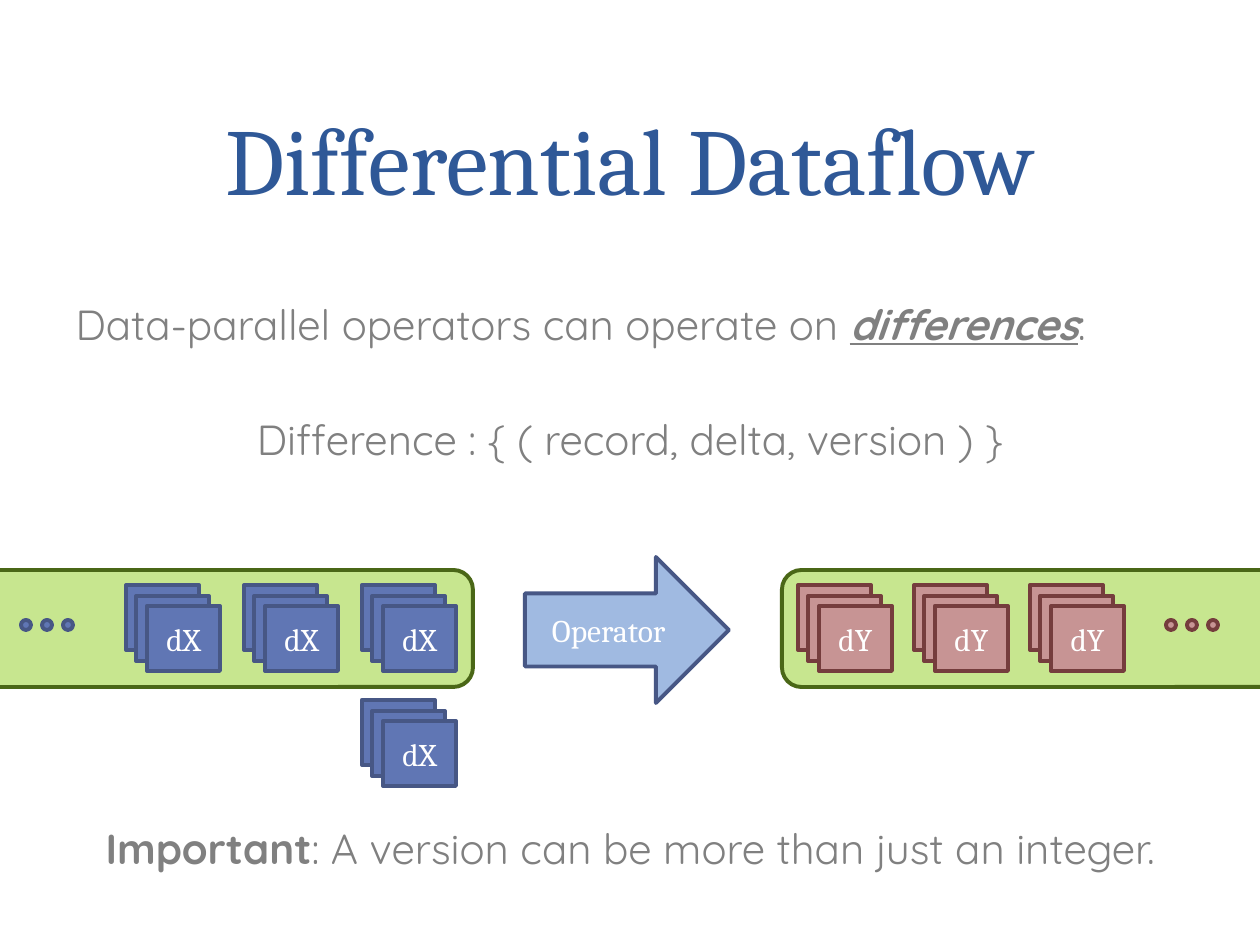
import pptx
import pptx.dml.color
import pptx.enum.shapes
import pptx.enum.text
import pptx.util
from lxml import etree

SHAPE = pptx.enum.shapes.MSO_SHAPE
ALIGN = pptx.enum.text.PP_ALIGN
ANCHOR = pptx.enum.text.MSO_ANCHOR
EMU_PER_PX = 914400 / 126
BLUE = ("6076B4", "475785")
RED = ("C79494", "753D3D")
GREEN = ("C7E68F", "4A6717")
SKY = ("A0BAE1", "475785")


def px(length):
    """Turn a length in px into EMU."""
    return pptx.util.Emu(round(length * EMU_PER_PX))


def color(code):
    """Turn a hex string into a colour."""
    return pptx.dml.color.RGBColor.from_string(code)


class Sketch:
    """Hold the style and the current slide."""

    serif, sans = "Cambria", "Quicksand"
    outline = pptx.util.Pt(2.25)

    def __init__(self, slide):
        """Start drawing on a slide."""
        self.slide = slide

    def place(self, holder, left, top, width, height):
        """Move a placeholder and fix its text size."""
        holder.left, holder.top = px(left), px(top)
        holder.width, holder.height = px(width), px(height)
        holder.text_frame.word_wrap = True
        holder.text_frame.auto_size = pptx.enum.text.MSO_AUTO_SIZE.NONE
        return holder.text_frame

    def run(self, paragraph, text, size, face, code, bold=False, italic=False, underline=False):
        """Add one formatted run."""
        run = paragraph.add_run()
        run.text = text
        font = run.font
        font.name, font.size, font.color.rgb = face, pptx.util.Pt(size), color(code)
        font.bold, font.italic, font.underline = bold, italic, underline

    def title(self, text):
        """Fill the title placeholder."""
        frame = self.place(self.slide.shapes.title, 63, 0, 1134, 221)
        frame.vertical_anchor = ANCHOR.BOTTOM
        heading = frame.paragraphs[0]
        heading.alignment = ALIGN.CENTER
        heading.line_spacing = pptx.util.Pt(58)
        self.run(heading, text, 54, self.serif, "2F5897")

    def body(self, statements):
        """Fill the body placeholder with unbulleted statements."""
        frame = self.place(self.slide.placeholders[1], 63, 233, 1134, 701)
        frame.margin_top = px(65)
        frame.vertical_anchor = ANCHOR.TOP
        for index, (alignment, gap, pieces) in enumerate(statements):
            statement = frame.add_paragraph() if index else frame.paragraphs[0]
            statement.alignment = alignment
            statement.space_before = pptx.util.Pt(gap)
            properties = statement._p.get_or_add_pPr()
            properties.set("marL", "0")
            properties.set("indent", "0")
            etree.SubElement(properties, pptx.oxml.ns.qn("a:buNone"))
            for text, emphasis in pieces:
                self.run(statement, text, 24, self.sans, "808080", **emphasis)

    def shape(self, kind, left, top, width, height, colors, label="", parent=None):
        """Add a filled, outlined shape with an optional label."""
        shapes = (parent or self.slide).shapes
        figure = shapes.add_shape(kind, px(left), px(top), px(width), px(height))
        figure.shadow.inherit = False
        figure.fill.solid()
        figure.fill.fore_color.rgb = color(colors[0])
        figure.line.color.rgb = color(colors[1])
        figure.line.width = self.outline
        if label:
            figure.text_frame.vertical_anchor = ANCHOR.MIDDLE
            caption = figure.text_frame.paragraphs[0]
            caption.alignment = ALIGN.CENTER
            self.run(caption, label, 18, self.serif, "FFFFFF")

    def stack(self, left, top, colors, label):
        """Add three overlapping cards, the front one labelled."""
        cards = self.slide.shapes.add_group_shape()
        for shift_x, shift_y, text in ((0, 0, ""), (10, 11, ""), (21, 21, label)):
            self.shape(SHAPE.RECTANGLE, left + shift_x, top + shift_y, 73, 65, colors, text, cards)

    def dots(self, left, top, colors):
        """Add three dots in a row."""
        ellipsis = self.slide.shapes.add_group_shape()
        for index in range(3):
            self.shape(SHAPE.OVAL, left + 21 * index, top, 10, 10, colors, parent=ellipsis)


def main():
    """Build the slide and save it."""
    deck = pptx.Presentation()
    deck.slide_width, deck.slide_height = px(1260), px(945)
    sketch = Sketch(deck.slides.add_slide(deck.slide_layouts[1]))

    sketch.title("Differential Dataflow")
    sketch.body([
        (ALIGN.LEFT, 0, [
            ("Data-parallel operators can operate on ", {}),
            ("differences", {"bold": True, "italic": True, "underline": True}),
            (":", {}),
        ]),
        (ALIGN.CENTER, 37.4, [("Difference : { ( record, delta, version ) }", {})]),
        (ALIGN.CENTER, 205, [
            ("Important", {"bold": True}),
            (": A version can be more than just an integer.", {}),
        ]),
    ])

    sketch.stack(362, 700, BLUE, "dX")
    sketch.shape(SHAPE.ROUNDED_RECTANGLE, 782, 570, 519, 117, GREEN)
    sketch.shape(SHAPE.ROUNDED_RECTANGLE, -84, 570, 557, 117, GREEN)
    sketch.shape(SHAPE.RIGHT_ARROW, 525, 557, 204, 146, SKY, "Operator")
    for index in range(3):
        sketch.stack(126 + 118 * index, 585, BLUE, "dX")
        sketch.stack(798 + 116 * index, 585, RED, "dY")
    sketch.dots(21, 620, BLUE)
    sketch.dots(1166, 620, RED)
    deck.save("out.pptx")


if __name__ == "__main__":
    main()
